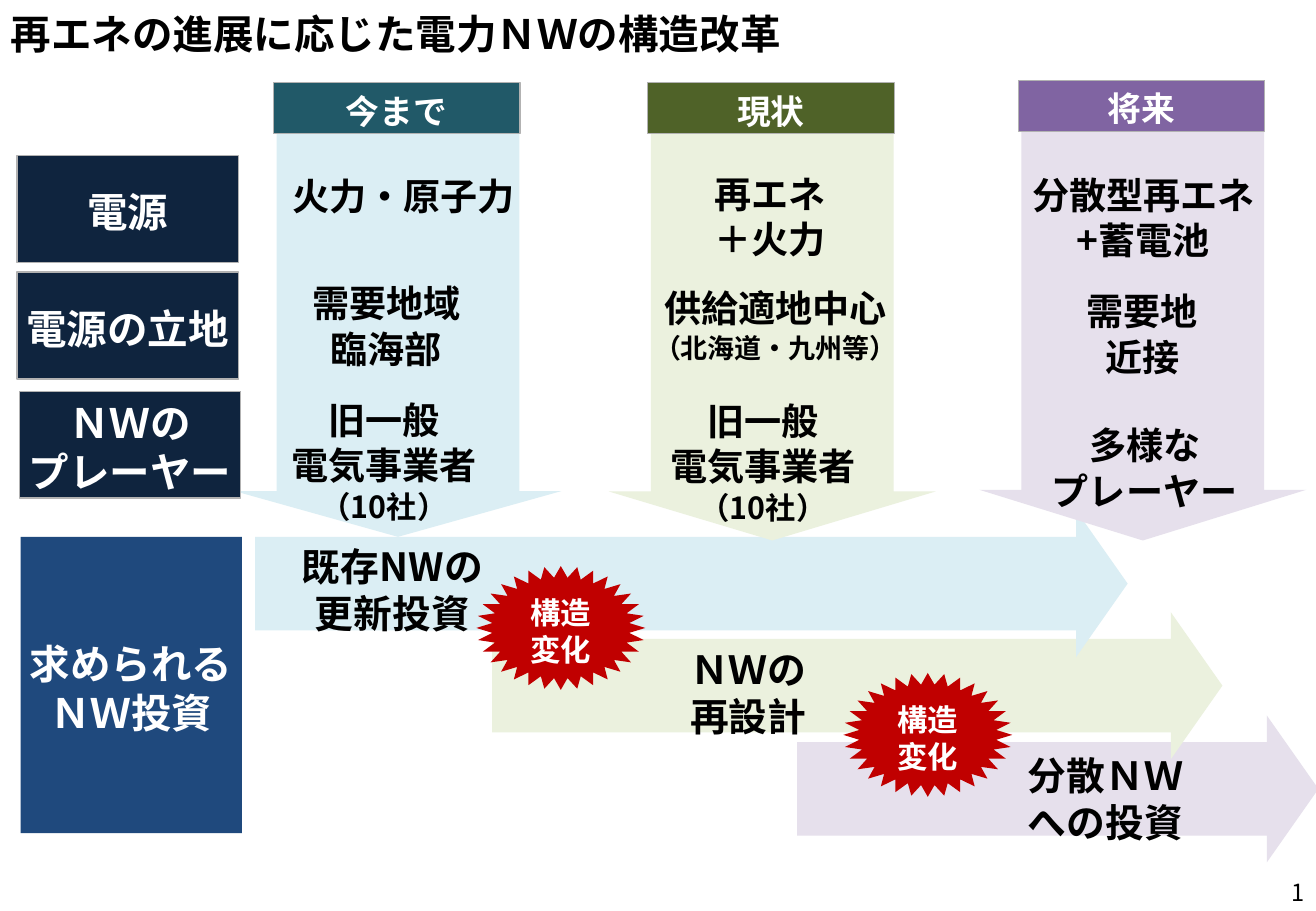
from pptx import Presentation
from pptx.dml.color import RGBColor
from pptx.enum.shapes import MSO_SHAPE
from pptx.enum.text import MSO_ANCHOR, PP_ALIGN
from pptx.oxml.xmlchemy import OxmlElement
from pptx.util import Emu, Pt

RECT, STAR = MSO_SHAPE.RECTANGLE, MSO_SHAPE.STAR_32_POINT
RIGHT_ARROW, DOWN_ARROW = MSO_SHAPE.RIGHT_ARROW, MSO_SHAPE.DOWN_ARROW
LEFT, CENTER, RIGHT = PP_ALIGN.LEFT, PP_ALIGN.CENTER, PP_ALIGN.RIGHT
TOP, MIDDLE = MSO_ANCHOR.TOP, MSO_ANCHOR.MIDDLE

PX = 9144
LINE_RATIO = 1.22
JAPANESE, LATIN = "Noto Sans CJK JP", "Calibri"
COLORS = {
    "black": "000000", "white": "FFFFFF", "border": "B2B2B2",
    "navy": "0F243E", "blue": "1F497D", "red": "C00000",
    "teal": "215968", "green": "4F6228", "purple": "8064A2",
    "pale_teal": "DBEEF4", "pale_green": "EBF1DE", "pale_purple": "E6E0EC",
}

STAGES = [
    {"box": (193, 68, 269, 374), "head": 0.14, "rise": 0,
     "name": "今まで", "dark": "teal", "pale": "pale_teal",
     "entries": [
         (20, 67, 238, [("火力・原子力", 22)]),
         (12, 155, 226, [("需要地域", 22), ("臨海部", 22)]),
         (10, 251, 226, [("旧一般", 22), ("電気事業者", 22), ("（10社）", 18)])]},
    {"box": (501, 71, 269, 374), "head": 0.15, "rise": 3,
     "name": "現状", "dark": "green", "pale": "pale_green",
     "entries": [
         (20, 62, 226, [("再エネ", 22), ("＋火力", 22)]),
         (24, 156, 226, [("供給適地中心", 22), ("（北海道・九州等）", 16)]),
         (14, 249, 226, [("旧一般", 22), ("電気事業者", 22), ("（10社）", 18)])]},
    {"box": (806, 71, 269, 374), "head": 0.155, "rise": 5,
     "name": "将来", "dark": "purple", "pale": "pale_purple",
     "entries": [
         (22, 63, 226, [("分散型再エネ", 22), ("+蓄電池", 22)]),
         (21, 159, 226, [("需要地", 22), ("近接", 22)]),
         (23, 269, 226, [("多様な", 22), ("プレーヤー", 22)])]},
]

INVESTMENTS = [
    (0, 0, 718, "pale_teal", (0, 19), ["既存NWの", "更新投資"]),
    (195, 84, 601, "pale_green", (98, 20), ["ＮＷの", "再設計"]),
    (446, 169, 429, "pale_purple", (141, 22), ["分散ＮＷ", "への投資"]),
]
STAR_OFFSETS = [(182, 46), (484, 134)]

ROW_LABELS = [
    ((0, 0, 182, 88), ["電源"], "navy", "border"),
    ((0, 96, 182, 88), ["電源の立地"], "navy", "border"),
    ((2, 194, 182, 88), ["ＮＷの", "プレーヤー"], "navy", "border"),
    ((3, 314, 182, 244), ["求められる", "ＮＷ投資"], "blue", None),
]


def color(name):
    return RGBColor.from_string(COLORS[name])


def scaled(box):
    return [Emu(length * PX) for length in box]


def write(shape, lines, ink="black", align=CENTER, anchor=TOP,
          font=JAPANESE, bold=True, wrap=True):
    frame = shape.text_frame
    settings = {"word_wrap": wrap, "vertical_anchor": anchor,
                "margin_left": Emu(9 * PX), "margin_right": Emu(9 * PX),
                "margin_top": Emu(7 * PX), "margin_bottom": Emu(3 * PX)}
    for key, value in settings.items():
        setattr(frame, key, value)
    for index, (text, size) in enumerate(lines):
        para = frame.add_paragraph() if index else frame.paragraphs[0]
        para.alignment = align
        para.line_spacing = Pt(round(size * LINE_RATIO))
        span = para.add_run()
        span.text = text
        for key, value in {"size": Pt(size), "bold": bold, "name": font}.items():
            setattr(span.font, key, value)
        span.font.color.rgb = color(ink)
        east_asian = OxmlElement("a:ea")
        east_asian.set("typeface", JAPANESE)
        span.font._element.append(east_asian)


def add_text(page, box, lines, **style):
    write(page.shapes.add_textbox(*scaled(box)), lines, **style)


def add_block(page, kind, box, fill, border=None, adjustments=()):
    shape = page.shapes.add_shape(kind, *scaled(box))
    shape.shadow.inherit = False
    shape.fill.solid()
    shape.fill.fore_color.rgb = color(fill)
    if border:
        shape.line.color.rgb = color(border)
        shape.line.width = Pt(0.75)
    else:
        shape.line.fill.background()
    for index, value in enumerate(adjustments):
        shape.adjustments[index] = value
    return shape


def add_investments(page, box):
    left, top = box[:2]
    for x, y, width, fill, text_offset, lines in reversed(INVESTMENTS):
        add_block(page, RIGHT_ARROW, (left + x, top + y, width, 121), fill,
                  adjustments=(0.637, 0.351))
        text_x, text_y = text_offset
        add_text(page, (left + x + text_x, top + y + text_y, 226, 88),
                 [(line, 23) for line in lines])
    for x, y in STAR_OFFSETS:
        star = add_block(page, STAR, (left + x, top + y, 139, 102), "red",
                         adjustments=(0.407,))
        write(star, [("構造", 18), ("変化", 18)], ink="white", anchor=MIDDLE,
              font=LATIN, wrap=False)


def add_stage(page, box, stage):
    left, top = box[:2]
    add_block(page, DOWN_ARROW, box, stage["pale"],
              adjustments=(0.743, stage["head"]))
    for x, y, width, lines in stage["entries"]:
        height = 10 + sum(round(size * 1.68) for _, size in lines)
        add_text(page, (left + x, top + y, width, height), lines)
    header = add_block(page, RECT, (left + 32, top - stage["rise"], 203, 42),
                       stage["dark"], "border")
    write(header, [(stage["name"], 20)], ink="white", anchor=MIDDLE, wrap=False)


def add_row_labels(page, box):
    left, top = box[:2]
    for (x, y, width, height), lines, fill, border in ROW_LABELS:
        label = add_block(page, RECT, (left + x, top + y, width, height),
                          fill, border)
        write(label, [(line, 24) for line in lines], ink="white",
              anchor=MIDDLE, font=LATIN, wrap=False)


def main():
    deck = Presentation()
    deck.slide_width, deck.slide_height = scaled((1083, 750))
    page = deck.slides.add_slide(deck.slide_layouts[6])
    add_investments(page, (210, 420, 875, 290))
    for stage in STAGES:
        add_stage(page, stage["box"], stage)
    add_row_labels(page, (14, 128, 185, 558))
    add_text(page, (0, 0, 1083, 50),
             [("再エネの進展に応じた電力ＮＷの構造改革", 24)], align=LEFT)
    add_text(page, (832, 714, 251, 36), [("1", 14)], align=RIGHT,
             anchor=MIDDLE, bold=False)
    deck.save("out.pptx")


if __name__ == "__main__":
    main()
